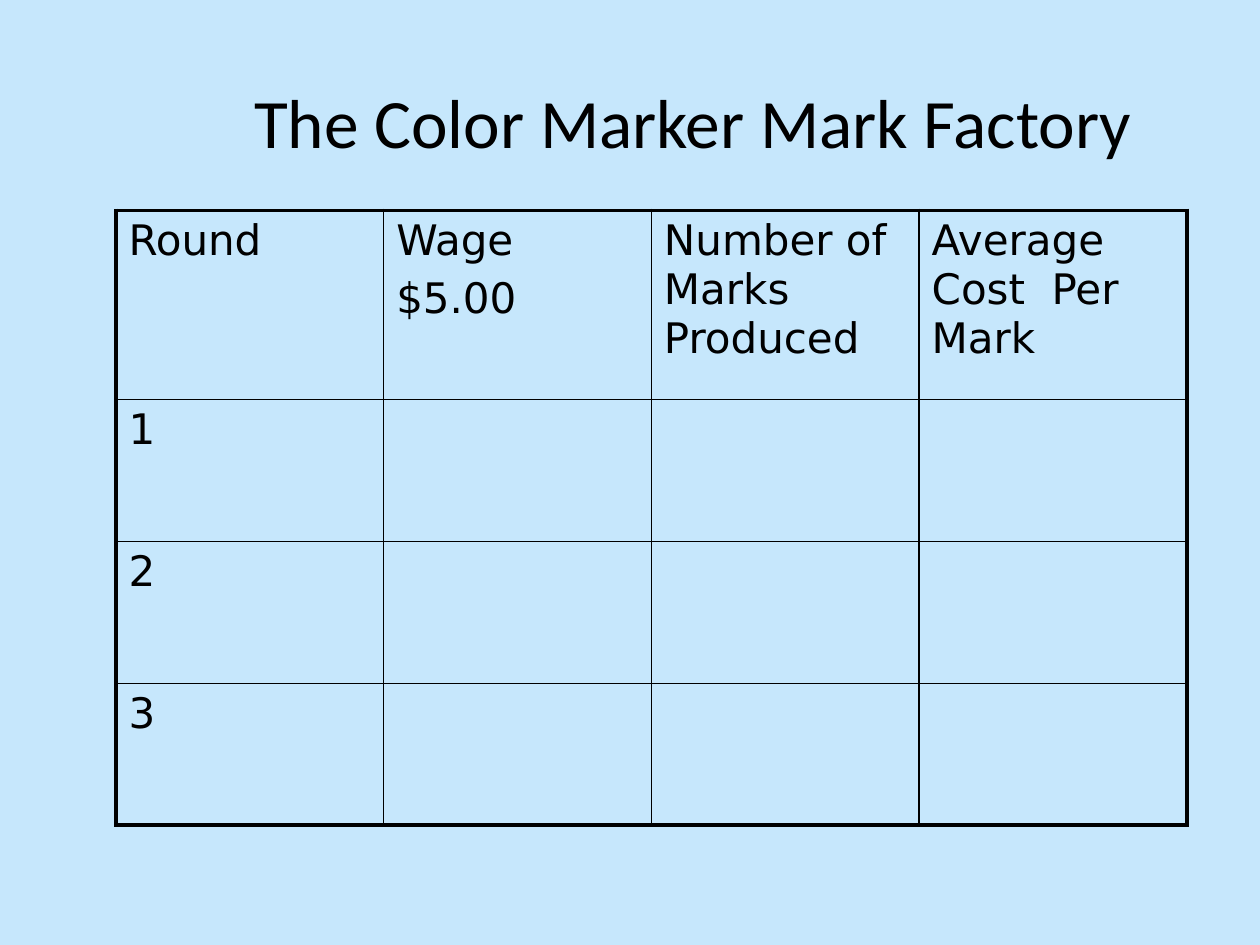
from lxml import etree
from pptx import Presentation
from pptx.dml.color import RGBColor
from pptx.enum.text import MSO_ANCHOR, PP_ALIGN
from pptx.oxml.ns import qn
from pptx.util import Inches, Pt

CENTER = PP_ALIGN.CENTER
MIDDLE = MSO_ANCHOR.MIDDLE
TITLE_ONLY = 5
BACKGROUND, INK = "C6E7FC", "000000"
THIN, THICK = Pt(1), Pt(2.25)
HEADINGS = [
    ["Round"],
    ["Wage", "$5.00"],
    ["Number of Marks Produced"],
    ["Average Cost  Per Mark"],
]
ROUNDS = ["1", "2", "3"]


def color(hex_string):
    return RGBColor.from_string(hex_string)


def add_text(para, text, font, size):
    span = para.add_run()
    span.text = text
    span.font.name = font
    span.font.size = Pt(size)
    span.font.color.rgb = color(INK)


def add_border(cell, side, width):
    properties = cell._tc.get_or_add_tcPr()
    line = etree.SubElement(properties, qn(f"a:ln{side}"), w=str(width))
    fill = etree.SubElement(line, qn("a:solidFill"))
    etree.SubElement(fill, qn("a:srgbClr"), val=INK)


def fill_cell(cell, lines):
    frame = cell.text_frame
    for index, text in enumerate(lines):
        para = frame.add_paragraph() if index else frame.paragraphs[0]
        if index:
            para.space_before = Pt(4.8)
        add_text(para, text, "DejaVu Sans", 24)


def add_title(page, left, top, width, height):
    box = page.shapes.title
    box.left, box.top, box.width, box.height = left, top, width, height
    box.text_frame.vertical_anchor = MIDDLE
    para = box.text_frame.paragraphs[0]
    para.alignment = CENTER
    add_text(para, "The Color Marker Mark Factory", "Calibri", 39.6)


def add_round_table(page, left, top, width, height):
    """Place the record table: a taller heading row above equal round rows."""
    content = [HEADINGS]
    content += [[[number]] + [[]] * (len(HEADINGS) - 1) for number in ROUNDS]
    last_row, last_column = len(content) - 1, len(HEADINGS) - 1
    table = page.shapes.add_table(
        len(content), len(HEADINGS), left, top, width, height).table
    table.first_row = table.horz_banding = False

    heading_height = Inches(1.5)
    for column in table.columns:
        column.width = width // len(HEADINGS)
    for row in table.rows:
        row.height = (height - heading_height) // len(ROUNDS)
    table.rows[0].height = heading_height

    for r, row in enumerate(content):
        for c, lines in enumerate(row):
            cell = table.cell(r, c)
            fill_cell(cell, lines)
            outer = {"L": c == 0, "R": c == last_column,
                     "T": r == 0, "B": r == last_row}
            for side, is_outer in outer.items():
                add_border(cell, side, THICK if is_outer else THIN)
            cell.fill.background()


def main():
    deck = Presentation()
    deck.slide_width, deck.slide_height = Inches(10), Inches(7.5)
    page = deck.slides.add_slide(deck.slide_layouts[TITLE_ONLY])
    page.background.fill.solid()
    page.background.fill.fore_color.rgb = color(BACKGROUND)
    add_title(page, Inches(1.5), Inches(0.33), Inches(8), Inches(1.25))
    add_round_table(page, Inches(0.92), Inches(1.67), Inches(8.5), Inches(4.88))
    deck.save("out.pptx")


if __name__ == "__main__":
    main()
